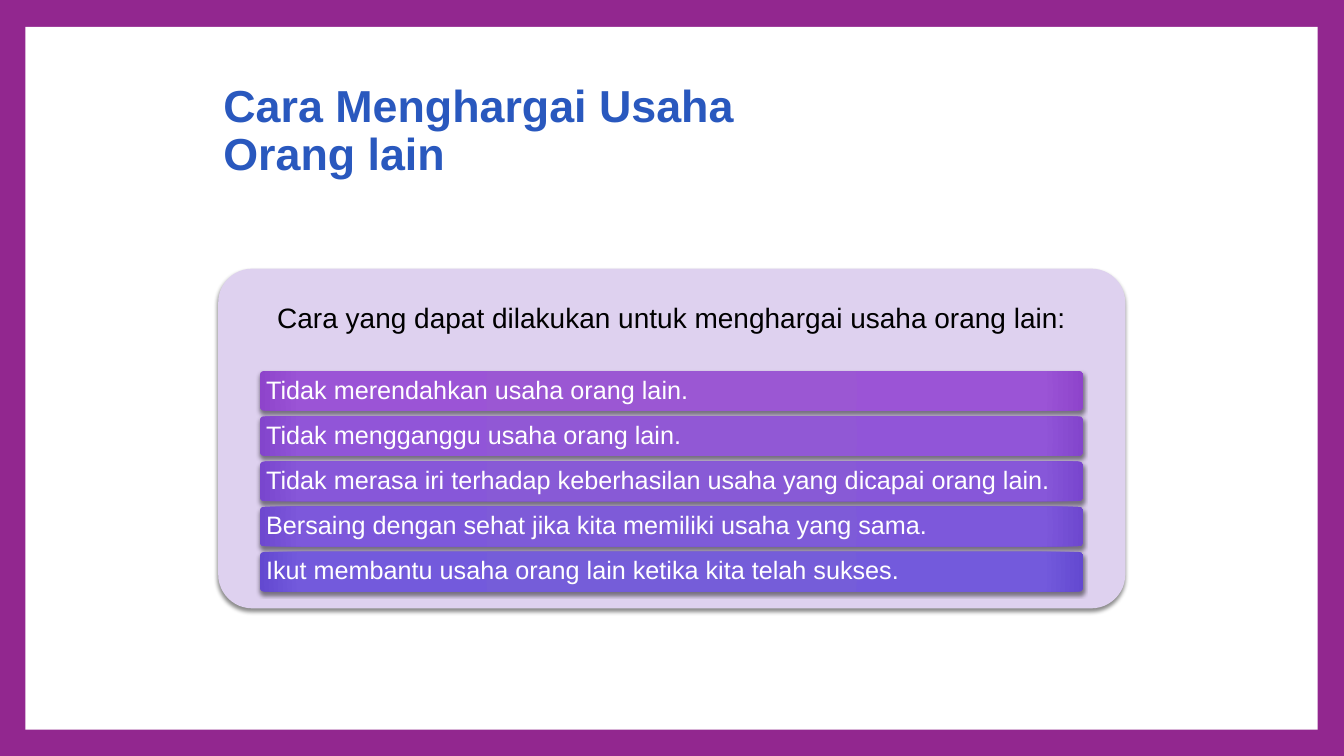
from lxml import etree
from pptx import Presentation
from pptx.dml.color import RGBColor
from pptx.enum.shapes import MSO_SHAPE
from pptx.enum.text import MSO_ANCHOR, PP_ALIGN
from pptx.oxml.ns import qn
from pptx.util import Cm, Pt

RECTANGLE = MSO_SHAPE.RECTANGLE
ROUNDED = MSO_SHAPE.ROUNDED_RECTANGLE
MIDDLE = MSO_ANCHOR.MIDDLE
LEFT, CENTER = PP_ALIGN.LEFT, PP_ALIGN.CENTER

TITLE = "Cara Menghargai Usaha Orang lain"
HEADING = "Cara yang dapat dilakukan untuk menghargai usaha orang lain:"
WAYS = [
    ("Tidak merendahkan usaha orang lain.", ("9B57D3", "9B54D6", "8E44CB")),
    ("Tidak mengganggu usaha orang lain.", ("9158D5", "9155D8", "8345CC")),
    ("Tidak merasa iri terhadap keberhasilan usaha yang dicapai orang lain.",
     ("885AD6", "8757D9", "7946CE")),
    ("Bersaing dengan sehat jika kita memiliki usaha yang sama.",
     ("7E5BD8", "7D58DB", "6E48CF")),
    ("Ikut membantu usaha orang lain ketika kita telah sukses.",
     ("755DD9", "735ADC", "6349D0")),
]
STOPS = (0, 90000, 100000)

FONT = "Arial"
PURPLE = RGBColor(0x92, 0x27, 0x8F)
LILAC = RGBColor(0xDE, 0xD1, 0xEF)
BLUE = RGBColor(0x29, 0x58, 0xBE)
WHITE = RGBColor(0xFF, 0xFF, 0xFF)
BLACK = RGBColor(0, 0, 0)

BAR_LEFT, BAR_TOP, BAR_WIDTH, BAR_HEIGHT = 6.55, 9.35, 20.75, 1
BAR_PITCH = 1.14


def add_block(slide, kind, left, top, width, height):
    shape = slide.shapes.add_shape(kind, Cm(left), Cm(top), Cm(width), Cm(height))
    shape.shadow.inherit = False
    shape.line.fill.background()
    if kind == ROUNDED:
        shape.adjustments[0] = 0.1
    return shape


def add_shadow(shape):
    effects = shape.element.spPr.find(qn("a:effectLst"))
    shadow = etree.SubElement(effects, qn("a:outerShdw"), blurRad=str(Pt(3)),
                              dist=str(Pt(2)), dir="5400000", rotWithShape="0")
    color = etree.SubElement(shadow, qn("a:srgbClr"), val="000000")
    etree.SubElement(color, qn("a:alpha"), val="45000")


def fill_radial(shape, colors):
    shape.fill.gradient()
    gradient = shape.element.spPr.find(qn("a:gradFill"))
    for child in list(gradient):
        gradient.remove(child)
    stops = etree.SubElement(gradient, qn("a:gsLst"))
    for position, color in zip(STOPS, colors):
        stop = etree.SubElement(stops, qn("a:gs"), pos=str(position))
        etree.SubElement(stop, qn("a:srgbClr"), val=color)
    circle = etree.SubElement(gradient, qn("a:path"), path="circle")
    etree.SubElement(circle, qn("a:fillToRect"),
                     {side: "100000" for side in "ltrb"})


def write(shape, text, size, color, margins, alignment=LEFT, bold=False):
    frame = shape.text_frame
    frame.word_wrap = True
    frame.vertical_anchor = MIDDLE
    (frame.margin_left, frame.margin_top,
     frame.margin_right, frame.margin_bottom) = [Cm(margin) for margin in margins]
    frame.text = text
    paragraph = frame.paragraphs[0]
    paragraph.alignment = alignment
    paragraph.line_spacing = 0.9
    font = paragraph.runs[0].font
    font.name, font.size, font.bold = FONT, Pt(size), bold
    font.color.rgb = color


def main():
    presentation = Presentation()
    presentation.slide_width, presentation.slide_height = Cm(33.87), Cm(19.05)
    slide = presentation.slides.add_slide(presentation.slide_layouts[6])
    slide.background.fill.solid()
    slide.background.fill.fore_color.rgb = PURPLE

    page = add_block(slide, RECTANGLE, 0.64, 0.68, 32.57, 17.71)
    page.fill.solid()
    page.fill.fore_color.rgb = WHITE

    panel = add_block(slide, ROUNDED, 5.5, 6.77, 22.86, 8.56)
    panel.fill.solid()
    panel.fill.fore_color.rgb = LILAC
    add_shadow(panel)
    write(panel, HEADING, 20, BLACK, (0.2, 0, 0.2, 6), CENTER)

    for index, (way, colors) in enumerate(WAYS):
        bar = add_block(slide, ROUNDED, BAR_LEFT, BAR_TOP + index * BAR_PITCH,
                        BAR_WIDTH, BAR_HEIGHT)
        fill_radial(bar, colors)
        add_shadow(bar)
        write(bar, way, 18, WHITE, (0.13, 0.1, 0.13, 0.1))

    title = slide.shapes.add_textbox(Cm(5.38), Cm(2.06), Cm(15.14), Cm(2.54))
    write(title, TITLE, 32, BLUE, (0.25, 0.13, 0.25, 0.13), bold=True)

    presentation.save("out.pptx")


if __name__ == "__main__":
    main()
